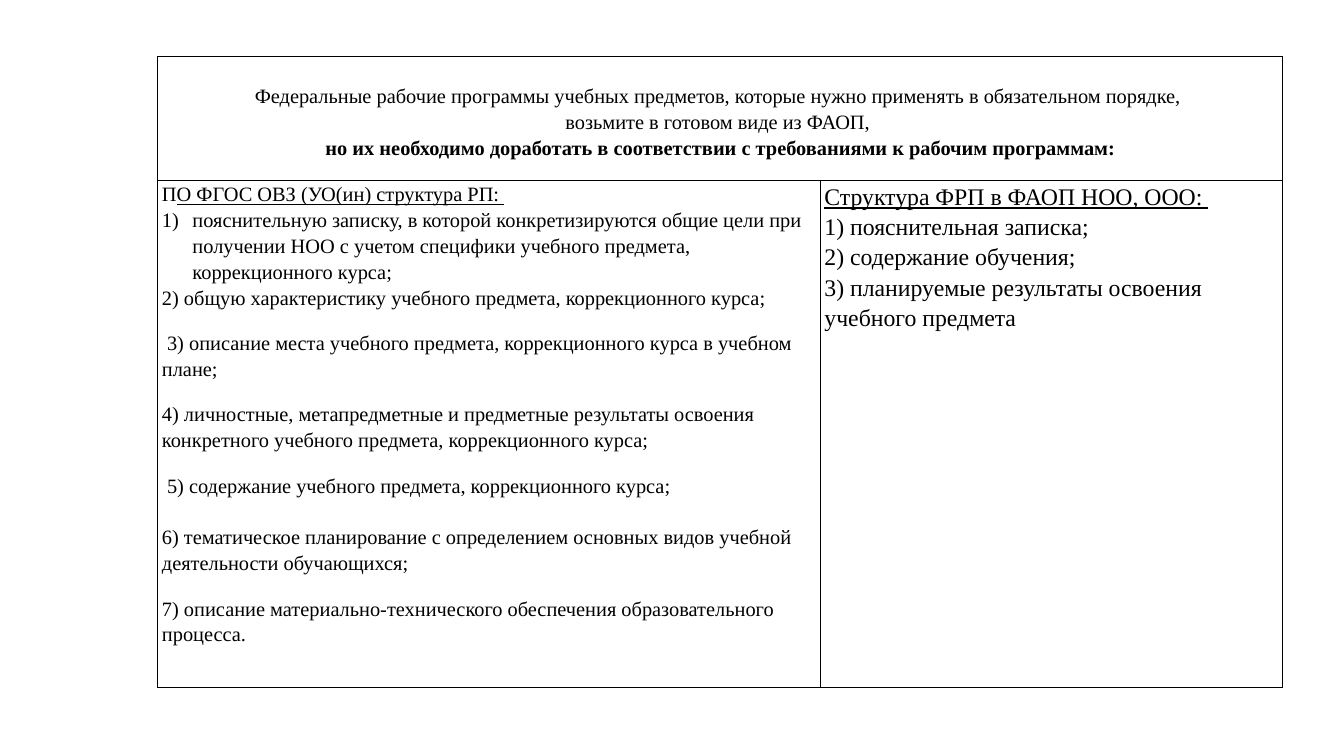
from dataclasses import dataclass

from lxml import etree
from pptx import Presentation
from pptx import util as u
from pptx.dml.color import RGBColor
from pptx.enum import text
from pptx.oxml import ns

HEADER = [
    "Федеральные рабочие программы учебных предметов, которые нужно применять в обязательном порядке, ",
    "возьмите в готовом виде из ФАОП, ",
    "но их необходимо доработать в соответствии с требованиями к рабочим программам:",
]
STANDARD_TITLE = ("П", "О ФГОС ОВЗ (УО(ин) структура РП: ")
NUMBERED_ITEM = (
    "пояснительную записку, в которой конкретизируются общие цели при получении НОО "
    "с учетом специфики учебного предмета, коррекционного курса;"
)
STANDARD_ITEMS = [
    ("2) общую характеристику учебного предмета, коррекционного курса;", 0),
    (" 3) описание места учебного предмета, коррекционного курса в учебном плане;", 18),
    ("4) личностные, метапредметные и предметные результаты освоения конкретного "
     "учебного предмета, коррекционного курса;", 18),
    (" 5) содержание учебного предмета, коррекционного курса;", 18),
    ("6) тематическое планирование с определением основных видов учебной "
     "деятельности обучающихся;", 24),
    ("7) описание материально-технического обеспечения образовательного процесса.", 18),
]
PROGRAM_TITLE = "Структура ФРП в ФАОП НОО, ООО: "
PROGRAM_ITEMS = [
    "1) пояснительная записка;",
    "2) содержание обучения;",
    "3) планируемые результаты освоения учебного предмета",
]
COLUMN_WIDTHS = (10.84, 7.57)
ROW_HEIGHTS = (2.02, 8.29)


@dataclass(frozen=True)
class Theme:
    font: str = "Times New Roman"
    ink: str = "000000"
    body: int = 24
    large: int = 28
    line_spacing: float = 1.15
    gap_ratio: float = 1.27
    border: float = 1


THEME = Theme()


def add_run(paragraph, words, size=THEME.body, bold=False, underline=False):
    run = paragraph.add_run()
    run.text = words
    font = run.font
    font.name, font.size = THEME.font, u.Pt(size)
    font.bold, font.underline = bold, underline
    font.color.rgb = RGBColor.from_string(THEME.ink)


def add_paragraph(cell, gap=0, align=text.PP_ALIGN.LEFT):
    frame = cell.text_frame
    first = frame.paragraphs[0]
    paragraph = frame.add_paragraph() if first.runs else first
    paragraph.alignment = align
    paragraph.line_spacing = THEME.line_spacing
    if gap:
        paragraph.space_before = u.Pt(round(gap * THEME.gap_ratio, 1))
    return paragraph


def number_paragraph(paragraph):
    properties = paragraph._p.get_or_add_pPr()
    properties.set("marL", str(u.Inches(0.5)))
    properties.set("indent", str(-u.Inches(0.5)))
    etree.SubElement(properties, ns.qn("a:buFont"), typeface="+mj-lt")
    etree.SubElement(properties, ns.qn("a:buAutoNum"), type="arabicParenR")


def format_cell(cell):
    cell.margin_left = cell.margin_right = u.Inches(0.07)
    cell.margin_top = cell.margin_bottom = 0
    properties = cell._tc.get_or_add_tcPr()
    for side in ("lnL", "lnR", "lnT", "lnB"):
        line = etree.SubElement(properties, ns.qn(f"a:{side}"), w=str(u.Pt(THEME.border)))
        fill = etree.SubElement(line, ns.qn("a:solidFill"))
        etree.SubElement(fill, ns.qn("a:srgbClr"), val=THEME.ink)
    cell.fill.background()


def add_requirements_table(slide):
    table = slide.shapes.add_table(
        len(ROW_HEIGHTS), len(COLUMN_WIDTHS), u.Inches(2.58), u.Inches(0.93),
        u.Inches(sum(COLUMN_WIDTHS)), u.Inches(sum(ROW_HEIGHTS)),
    ).table
    table.first_row = table.horz_banding = False
    for column, width in zip(table.columns, COLUMN_WIDTHS):
        column.width = u.Inches(width)
    for row, height in zip(table.rows, ROW_HEIGHTS):
        row.height = u.Inches(height)
    for cell in table.iter_cells():
        format_cell(cell)
    header = table.cell(0, 0)
    header.merge(table.cell(0, 1))
    return header, table.cell(1, 0), table.cell(1, 1)


def fill_header(cell):
    cell.margin_top = u.Inches(0.42)
    for words in HEADER:
        paragraph = add_paragraph(cell, align=text.PP_ALIGN.CENTER)
        add_run(paragraph, words, bold=words == HEADER[-1])


def fill_standard(cell):
    plain, underlined = STANDARD_TITLE
    title = add_paragraph(cell)
    add_run(title, plain)
    add_run(title, underlined, underline=True)
    numbered = add_paragraph(cell)
    number_paragraph(numbered)
    add_run(numbered, NUMBERED_ITEM)
    for words, gap in STANDARD_ITEMS:
        add_run(add_paragraph(cell, gap), words)


def fill_program(cell):
    add_run(add_paragraph(cell), PROGRAM_TITLE, THEME.large, underline=True)
    for words in PROGRAM_ITEMS:
        add_run(add_paragraph(cell), words, THEME.large)


def main():
    presentation = Presentation()
    presentation.slide_width = u.Inches(21.99)
    presentation.slide_height = u.Inches(12.37)
    slide = presentation.slides.add_slide(presentation.slide_layouts[6])
    header, standard, program = add_requirements_table(slide)
    fill_header(header)
    fill_standard(standard)
    fill_program(program)
    presentation.save("out.pptx")


if __name__ == "__main__":
    main()
